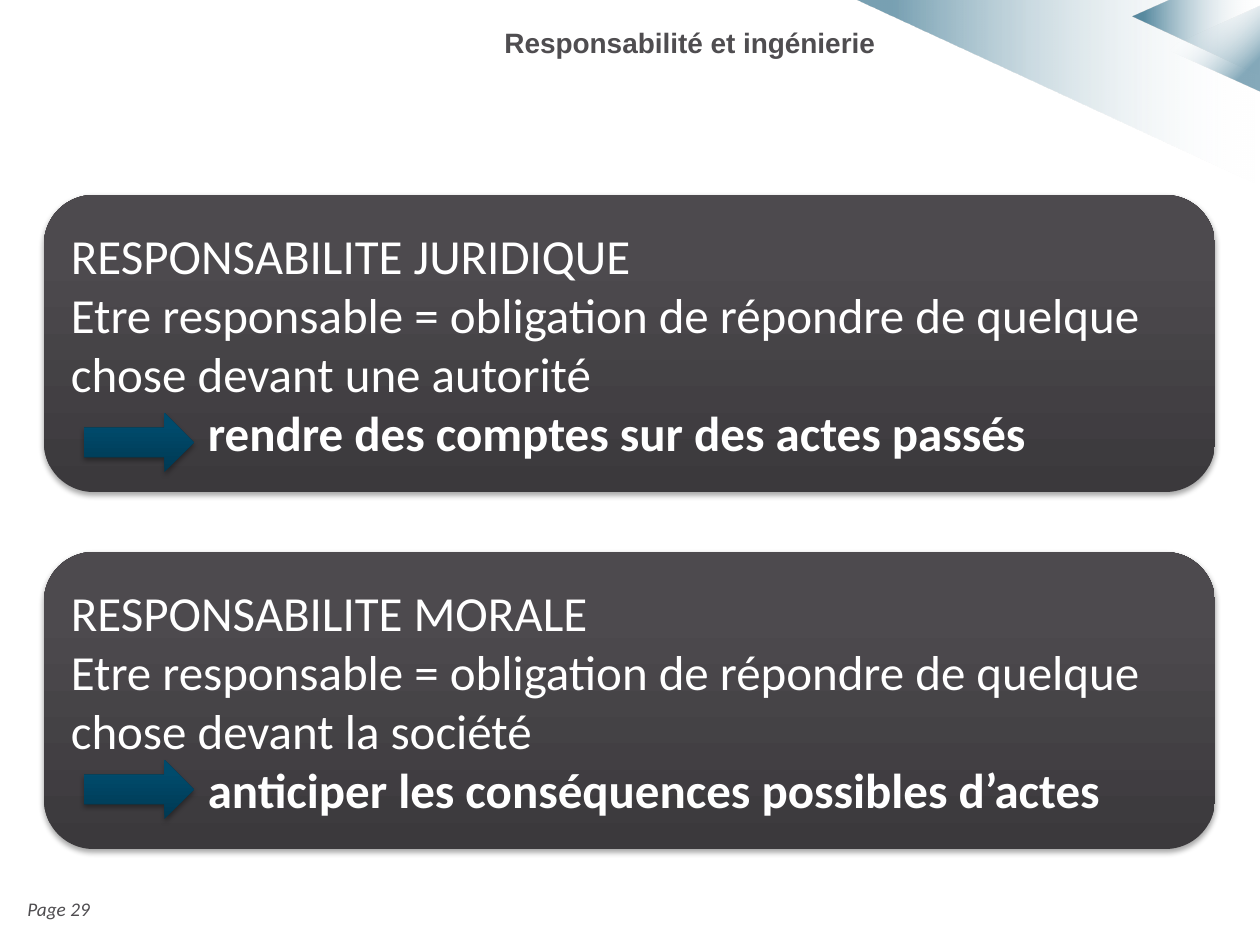
"""Build the slide on legal and moral responsibility in engineering."""
from lxml.etree import SubElement
from pptx import Presentation
from pptx.dml.color import RGBColor
from pptx.enum.shapes import MSO_SHAPE
from pptx.enum.text import MSO_ANCHOR, MSO_AUTO_SIZE, PP_ALIGN
from pptx.oxml.ns import qn
from pptx.oxml.xmlchemy import OxmlElement
from pptx.util import Emu, Pt

SCALE = 914400 / 126
WHITE = RGBColor(0xFF, 0xFF, 0xFF)
GREY = RGBColor(0x4F, 0x4D, 0x50)
BLUE = RGBColor(0x00, 0x4D, 0x6F)
BLACK = RGBColor(0x00, 0x00, 0x00)
CARD_DARK = RGBColor(0x3B, 0x39, 0x3C)
CARD_LIGHT = RGBColor(0x4D, 0x4A, 0x4E)
ARROW_DARK = RGBColor(0x00, 0x39, 0x53)
ARROW_LIGHT = RGBColor(0x00, 0x4B, 0x6C)

CARDS = [
    (195, 413, "RESPONSABILITE JURIDIQUE",
     "Etre responsable = obligation de répondre de quelque chose devant une autorité",
     "rendre des comptes sur des actes passés"),
    (552, 760, "RESPONSABILITE MORALE",
     "Etre responsable = obligation de répondre de quelque chose devant la société",
     "anticiper les conséquences possibles d’actes"),
]


def px(length):
    return Emu(round(length * SCALE))


def box(left, top, width, height):
    return px(left), px(top), px(width), px(height)


def add_color(parent, color, opacity):
    element = SubElement(parent, qn("a:srgbClr"), val=str(color))
    if opacity < 100:
        SubElement(element, qn("a:alpha"), val=str(opacity * 1000))


def paint(shape, stops, angle):
    """Fill a shape with a gradient of (position, color, opacity) stops, without outline."""
    shape.shadow.inherit = False
    shape.line.fill.background()
    shape.fill.background()
    properties = shape._element.spPr
    gradient = OxmlElement("a:gradFill")
    gradient.set("rotWithShape", "1")
    stop_list = SubElement(gradient, qn("a:gsLst"))
    for position, color, opacity in stops:
        stop = SubElement(stop_list, qn("a:gs"), pos=str(position * 1000))
        add_color(stop, color, opacity)
    SubElement(gradient, qn("a:lin"), ang=str(angle * 60000), scaled="0")
    properties.replace(properties.find(qn("a:noFill")), gradient)


def add_shadow(shape):
    effects = shape._element.spPr.find(qn("a:effectLst"))
    shadow = SubElement(effects, qn("a:outerShdw"), blurRad=str(Pt(3.1)),
                        dist=str(Pt(1.8)), dir="5400000", rotWithShape="0")
    add_color(shadow, BLACK, 35)


def add_raised_shape(slide, kind, bounds, dark, light):
    shape = slide.shapes.add_shape(kind, *box(*bounds))
    paint(shape, [(0, dark, 100), (80, light, 100), (100, light, 100)], 270)
    add_shadow(shape)
    return shape


def add_ray(slide, points, opacity):
    builder = slide.shapes.build_freeform(*points[0], scale=SCALE)
    builder.add_line_segments(points[1:], close=True)
    paint(builder.convert_to_shape(), [(1, WHITE, 0), (91, BLUE, opacity)], 180)


def add_corner(slide):
    add_ray(slide, [(1259, 185), (856, 0), (1260, 0)], 53)
    add_ray(slide, [(1260, 76), (1133, 17), (1171, 0), (1260, 0)], 63)
    triangle = slide.shapes.add_shape(MSO_SHAPE.ISOSCELES_TRIANGLE, *box(1170, 1, 86, 95))
    triangle.rotation = 270
    paint(triangle, [(27, WHITE, 0), (81, BLUE, 48)], 135)


def set_font(paragraph, name, size, color, bold=False, italic=False):
    font = paragraph.font
    font.name, font.size, font.bold, font.italic = name, Pt(size), bold, italic
    font.color.rgb = color


def add_title(slide, text):
    title = slide.shapes.title
    title.left, title.top, title.width, title.height = box(253, 19, 635, 58)
    frame = title.text_frame
    frame.text = text
    frame.auto_size = MSO_AUTO_SIZE.NONE
    frame.vertical_anchor = MSO_ANCHOR.TOP
    paragraph = frame.paragraphs[0]
    paragraph.alignment = PP_ALIGN.RIGHT
    set_font(paragraph, "Arial", 16, GREY, bold=True)


def add_page_label(slide, text):
    frame = slide.shapes.add_textbox(*box(15, 891, 338, 36)).text_frame
    frame.word_wrap = True
    frame.text = text
    set_font(frame.paragraphs[0], "Calibri", 11, GREY, italic=True)


def add_card(slide, top, heading, definition, conclusion):
    card = add_raised_shape(slide, MSO_SHAPE.ROUNDED_RECTANGLE, (44, top, 1171, 297),
                            CARD_DARK, CARD_LIGHT)
    frame = card.text_frame
    frame.vertical_anchor = MSO_ANCHOR.MIDDLE
    frame.text = "\n".join([heading, definition, conclusion])
    for paragraph in frame.paragraphs:
        paragraph.alignment = PP_ALIGN.LEFT
        set_font(paragraph, "Calibri", 28, WHITE, bold=paragraph.text == conclusion)
    frame.paragraphs[-1]._p.get_or_add_pPr().set("marL", str(px(137)))


def main():
    presentation = Presentation()
    presentation.slide_width, presentation.slide_height = px(1260), px(945)
    slide = presentation.slides.add_slide(presentation.slide_layouts[5])
    add_corner(slide)
    add_page_label(slide, "Page 29")
    add_title(slide, "Responsabilité et ingénierie")
    for card_top, arrow_top, *texts in CARDS:
        add_card(slide, card_top, *texts)
        add_raised_shape(slide, MSO_SHAPE.RIGHT_ARROW, (84, arrow_top, 110, 59),
                         ARROW_DARK, ARROW_LIGHT)
    presentation.save("out.pptx")


if __name__ == "__main__":
    main()
